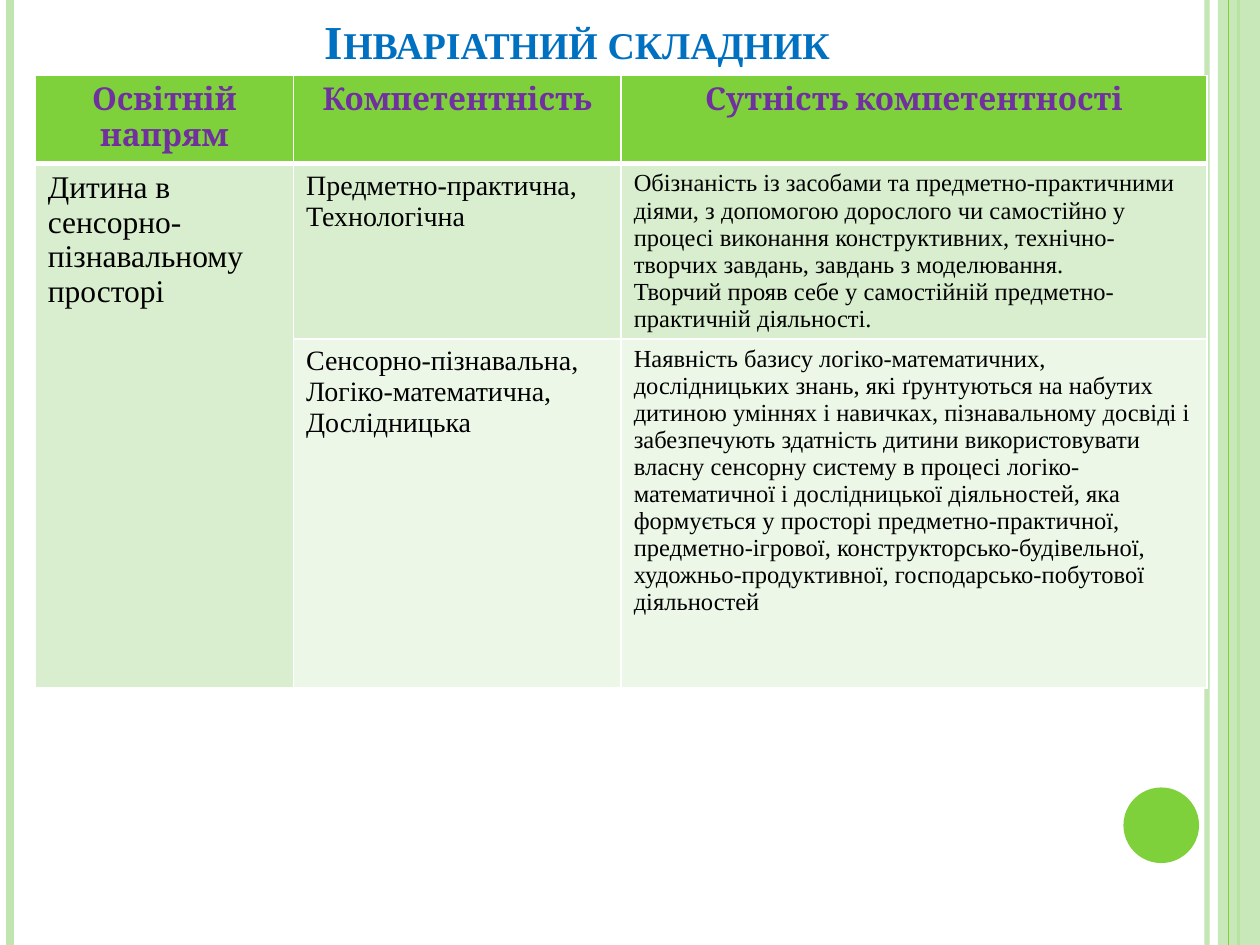
from dataclasses import dataclass

from lxml import etree
from pptx import Presentation
from pptx.dml.color import RGBColor
from pptx.enum.shapes import MSO_CONNECTOR, MSO_SHAPE
from pptx.enum.text import MSO_ANCHOR, MSO_AUTO_SIZE, PP_ALIGN
from pptx.oxml.ns import qn
from pptx.util import Pt

STRAIGHT = MSO_CONNECTOR.STRAIGHT
RECTANGLE, OVAL = MSO_SHAPE.RECTANGLE, MSO_SHAPE.OVAL
CENTER, LEFT = PP_ALIGN.CENTER, PP_ALIGN.LEFT
BOTTOM, NO_AUTOFIT = MSO_ANCHOR.BOTTOM, MSO_AUTO_SIZE.NONE
TITLE_ONLY = 5
WIDTH, HEIGHT = 720, 540


@dataclass(frozen=True)
class Theme:
    """Colours, fonts and type sizes of the slide."""
    green: str = "7FD13B"
    pale_green: str = "C0E5AF"
    first_band: str = "D8EECE"
    second_band: str = "ECF7E8"
    white: str = "FFFFFF"
    black: str = "000000"
    blue: str = "0070C0"
    purple: str = "7030A0"
    body_font: str = "Times New Roman"
    header_font: str = "Cambria"
    title_size: int = 27
    large_size: int = 18
    medium_size: int = 16
    small_size: int = 14


THEME = Theme()
COLUMN_WIDTHS = (147.6, 187.2, 334.8)
ROW_HEIGHTS = (50.4, 91.44, 199.4)
COLUMN_SIZES = (THEME.large_size, THEME.medium_size, THEME.small_size)
ROW_FILLS = (THEME.green, THEME.first_band, THEME.second_band)
ROWS = (
    ("Освітній напрям", "Компетентність", "Сутність компетентності"),
    (
        "Дитина в сенсорно-пізнавальному просторі",
        "Предметно-практична,\nТехнологічна",
        "Обізнаність із засобами та предметно-практичними діями, з допомогою дорослого "
        "чи самостійно у процесі виконання конструктивних, технічно-творчих завдань, "
        "завдань з моделювання.\n"
        "Творчий прояв себе у самостійній предметно-практичній діяльності.",
    ),
    (
        "",
        "Сенсорно-пізнавальна,\nЛогіко-математична,\nДослідницька",
        "Наявність базису логіко-математичних, дослідницьких знань, які ґрунтуються на "
        "набутих дитиною уміннях і навичках, пізнавальному досвіді і забезпечують "
        "здатність дитини використовувати власну сенсорну систему в процесі "
        "логіко-математичної і дослідницької діяльностей, яка формується у просторі "
        "предметно-практичної, предметно-ігрової, конструкторсько-будівельної, "
        "художньо-продуктивної, господарсько-побутової діяльностей",
    ),
)


def write_text(text_frame, text, *, size, color, font=THEME.body_font, bold=False,
               align=LEFT, small_caps=False):
    """Fill a text frame with one formatted paragraph per line of text."""
    text_frame.text = text
    for paragraph in text_frame.paragraphs:
        paragraph.alignment = align
        for run in paragraph.runs:
            run.font.name = font
            run.font.size = Pt(size)
            run.font.bold = bold
            run.font.color.rgb = RGBColor.from_string(color)
            if small_caps:
                run.font._element.set("cap", "small")


def set_opacity(shape, percent):
    """Make the colour of a shape partly transparent."""
    color = shape._element.spPr.find(".//" + qn("a:srgbClr"))
    etree.SubElement(color, qn("a:alpha"), val=str(percent * 1000))


def add_stripe(slide, x, width, color, opacity=100):
    """Draw a vertical line over the full height of the slide."""
    stripe = slide.shapes.add_connector(STRAIGHT, Pt(x), Pt(0), Pt(x), Pt(HEIGHT))
    stripe.line.width = Pt(width)
    stripe.line.color.rgb = RGBColor.from_string(color)
    etree.SubElement(stripe._element.spPr, qn("a:effectLst"))
    if opacity < 100:
        set_opacity(stripe, opacity)


def add_solid(slide, kind, left, top, width, height, color, opacity=100):
    """Draw a filled shape without outline."""
    shape = slide.shapes.add_shape(kind, Pt(left), Pt(top), Pt(width), Pt(height))
    shape.shadow.inherit = False
    shape.fill.solid()
    shape.fill.fore_color.rgb = RGBColor.from_string(color)
    shape.line.fill.background()
    if opacity < 100:
        set_opacity(shape, opacity)


def add_decoration(slide):
    """Draw the side stripes and the circle."""
    add_stripe(slide, 689.76, 3, THEME.pale_green, opacity=93)
    add_stripe(slide, 5.76, 4.5, THEME.pale_green)
    add_stripe(slide, 707.76, 1.5, THEME.green)
    add_solid(slide, RECTANGLE, 696, 0, 24, HEIGHT, THEME.pale_green, opacity=87)
    add_stripe(slide, 702, 0.75, THEME.green)
    add_solid(slide, OVAL, 642, 450, 43.2, 43.2, THEME.green)


def set_title(slide, text):
    """Place and format the title placeholder."""
    title = slide.shapes.title
    title.left, title.top, title.width, title.height = Pt(36), Pt(9.36), Pt(588), Pt(33.84)
    title.text_frame.auto_size = NO_AUTOFIT
    title.text_frame.vertical_anchor = BOTTOM
    write_text(title.text_frame, text, size=THEME.title_size, color=THEME.blue,
               bold=True, align=CENTER, small_caps=True)


def set_borders(cell, top, bottom):
    """Give a cell white borders with the given top and bottom widths."""
    properties = cell._tc.get_or_add_tcPr()
    for side, width in (("L", 1), ("R", 1), ("T", top), ("B", bottom)):
        border = etree.SubElement(properties, qn(f"a:ln{side}"), w=str(Pt(width)))
        fill = etree.SubElement(border, qn("a:solidFill"))
        etree.SubElement(fill, qn("a:srgbClr"), val=THEME.white)


def format_cell(cell, text, row, column):
    """Write one cell and set its borders and fill."""
    set_borders(cell, top=3 if row == 1 else 1, bottom=3 if row == 0 else 1)
    cell.fill.solid()
    cell.fill.fore_color.rgb = RGBColor.from_string(ROW_FILLS[row])
    if row == 0:
        write_text(cell.text_frame, text, size=THEME.large_size, color=THEME.purple,
                   font=THEME.header_font, bold=True, align=CENTER)
    else:
        write_text(cell.text_frame, text, size=COLUMN_SIZES[column], color=THEME.black)


def add_competence_table(slide):
    """Build the table of competences."""
    frame = slide.shapes.add_table(len(ROWS), len(COLUMN_WIDTHS), Pt(20.16), Pt(43.2),
                                   Pt(sum(COLUMN_WIDTHS)), Pt(sum(ROW_HEIGHTS)))
    table = frame.table
    table.horz_banding = False
    for column, width in zip(table.columns, COLUMN_WIDTHS):
        column.width = Pt(width)
    for row, height in zip(table.rows, ROW_HEIGHTS):
        row.height = Pt(height)
    for row_index, texts in enumerate(ROWS):
        for column_index, text in enumerate(texts):
            format_cell(table.cell(row_index, column_index), text, row_index, column_index)
    table.cell(1, 0).merge(table.cell(2, 0))


def main():
    """Build and save the presentation."""
    presentation = Presentation()
    presentation.slide_width, presentation.slide_height = Pt(WIDTH), Pt(HEIGHT)
    slide = presentation.slides.add_slide(presentation.slide_layouts[TITLE_ONLY])
    add_decoration(slide)
    set_title(slide, "Інваріатний складник")
    add_competence_table(slide)
    presentation.save("out.pptx")


if __name__ == "__main__":
    main()
